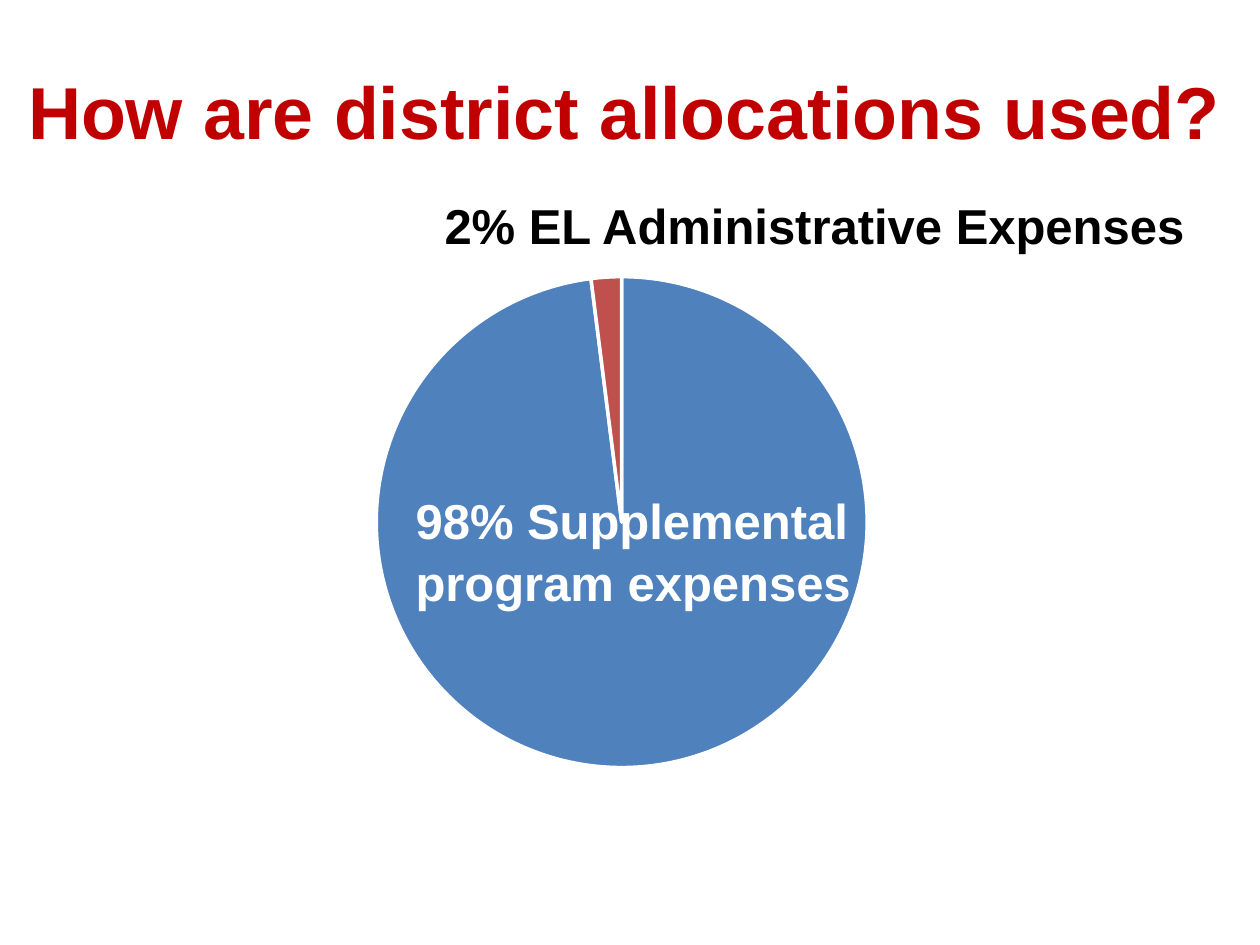
from dataclasses import dataclass

from lxml.etree import SubElement
from pptx import Presentation
from pptx.chart.data import CategoryChartData
from pptx.dml.color import RGBColor
from pptx.enum.chart import XL_CHART_TYPE
from pptx.enum.text import MSO_ANCHOR, PP_ALIGN
from pptx.oxml.ns import qn
from pptx.util import Inches, Pt


@dataclass(frozen=True)
class Theme:
    """Colours, fonts and type sizes of the slide."""
    title: str = "C00000"
    dark: str = "000000"
    light: str = "FFFFFF"
    slices: tuple = ("4F81BD", "C0504D", "9BBB59")
    text_font: str = "Arial"
    chart_font: str = "Calibri"
    title_size: int = 42
    label_size: int = 28
    chart_size: int = 10
    line_spacing: float = 1.05
    slice_border: float = 2


THEME = Theme()
WIDTH, HEIGHT = Inches(10), Inches(7.5)


def share(left, top, width, height):
    """Turn percentages of the slide into a box."""
    return tuple(int(part * side / 100) for part, side in
                 zip((left, top, width, height), (WIDTH, HEIGHT) * 2))


def add_text(slide, box, text, size, color):
    """Place one bold paragraph in the box and return its frame."""
    frame = slide.shapes.add_textbox(*box).text_frame
    frame.word_wrap = True
    frame.text = text
    paragraph = frame.paragraphs[0]
    paragraph.line_spacing = THEME.line_spacing
    font = paragraph.runs[0].font
    font.name, font.size, font.bold = THEME.text_font, Pt(size), True
    font.color.rgb = RGBColor.from_string(color)
    return frame


def add_title(slide, box, text):
    """Place the centred title without margins."""
    frame = add_text(slide, box, text, THEME.title_size, THEME.title)
    frame.margin_left = frame.margin_right = 0
    frame.margin_top = frame.margin_bottom = 0
    frame.vertical_anchor = MSO_ANCHOR.MIDDLE
    frame.paragraphs[0].alignment = PP_ALIGN.CENTER


def center_plot(chart, width, height):
    """Centre the plot area, sized as shares of the chart."""
    plot_area = chart.plots[0]._element.getparent()
    for old in plot_area.findall(qn("c:layout")):
        plot_area.remove(old)
    layout = SubElement(plot_area, qn("c:layout"))
    plot_area.insert(0, layout)
    manual = SubElement(layout, qn("c:manualLayout"))
    settings = {"layoutTarget": "inner", "xMode": "edge", "yMode": "edge",
                "x": (1 - width) / 2, "y": (1 - height) / 2,
                "w": width, "h": height}
    for name, value in settings.items():
        SubElement(manual, qn(f"c:{name}")).set("val", str(value))


def add_allocation_pie(slide, box):
    """Place the pie of district allocations in the box."""
    data = CategoryChartData()
    data.categories = ["1", "2", "3"]
    data.add_series("Series 1", (98, 2, 0))
    chart = slide.shapes.add_chart(XL_CHART_TYPE.PIE, *box, data).chart
    chart.has_legend = chart.has_title = False
    chart.font.name, chart.font.size = THEME.chart_font, Pt(THEME.chart_size)
    chart.font.color.rgb = RGBColor.from_string(THEME.dark)
    plot = chart.plots[0]
    plot.vary_by_categories = True
    for index, color in enumerate(THEME.slices):
        piece = plot.series[0].points[index].format
        piece.fill.solid()
        piece.fill.fore_color.rgb = RGBColor.from_string(color)
        piece.line.color.rgb = RGBColor.from_string(THEME.light)
        piece.line.width = Pt(THEME.slice_border)
    diameter = 0.93 * box[3]
    center_plot(chart, round(diameter / box[2], 2), 0.93)


def main():
    """Build and save the slide."""
    presentation = Presentation()
    presentation.slide_width, presentation.slide_height = WIDTH, HEIGHT
    slide = presentation.slides.add_slide(presentation.slide_layouts[6])
    add_title(slide, share(1.5, 6.67, 96.1, 9.47),
              "How are district allocations used?")
    add_allocation_pie(slide, share(11.6, 27.33, 75.5, 55.87))
    add_text(slide, share(34.3, 19.73, 63.3, 7.6),
             "2% EL Administrative Expenses", THEME.label_size, THEME.dark)
    add_text(slide, share(32, 50.93, 47.4, 13.87),
             "98% Supplemental program expenses", THEME.label_size, THEME.light)
    presentation.save("out.pptx")


if __name__ == "__main__":
    main()
